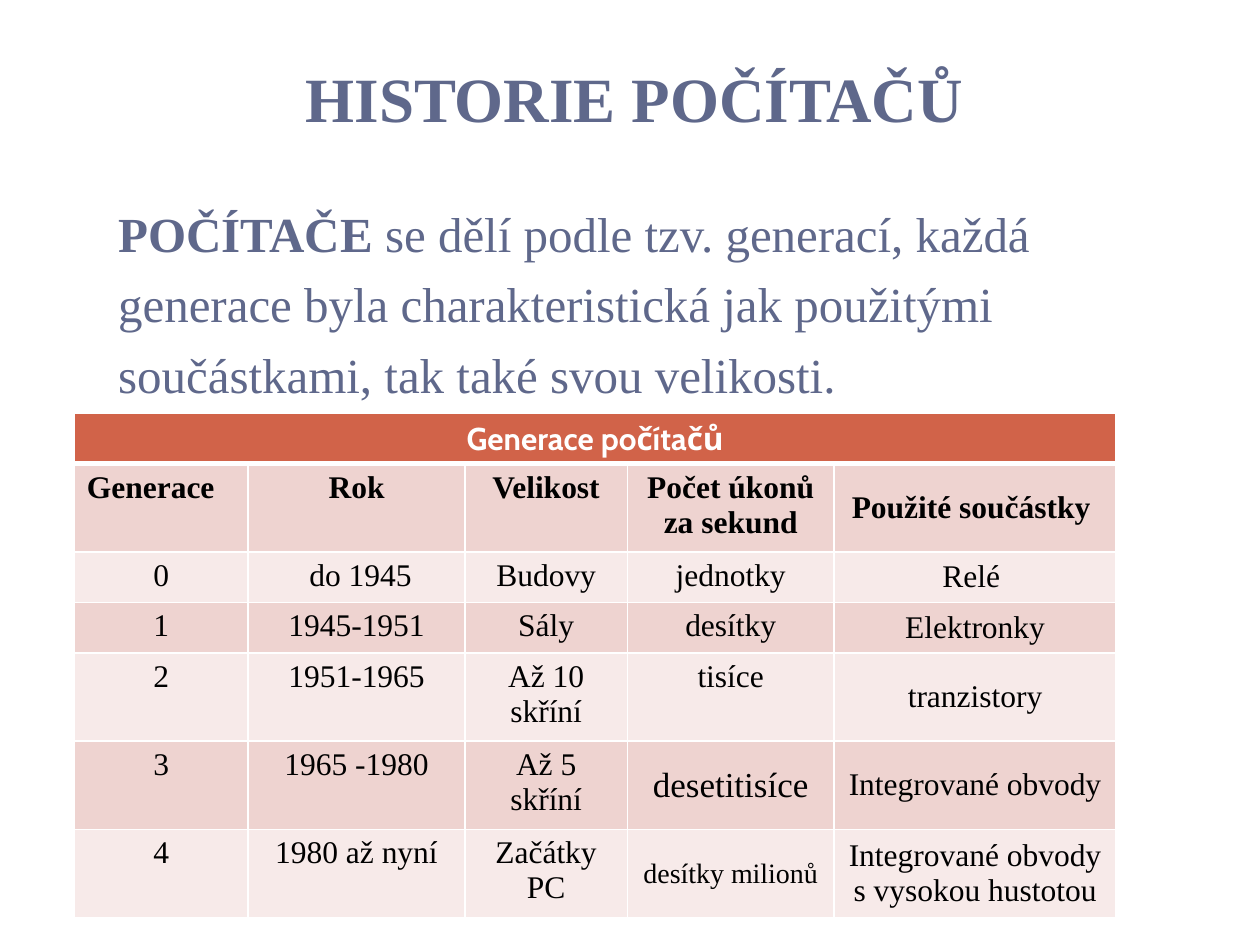
from lxml.etree import SubElement
from pptx import Presentation
from pptx.dml.color import RGBColor
from pptx.enum.text import MSO_ANCHOR, PP_ALIGN
from pptx.oxml import parse_xml
from pptx.oxml.ns import nsdecls
from pptx.util import Inches, Pt

COLORS = {
    "heading": "5F688B",
    "banner": "D16349",
    "dark_band": "EED3D0",
    "light_band": "F7EAE9",
    "ink": "000000",
    "white": "FFFFFF",
}
SERIF = "Times New Roman"
BANNER = "Generace počítačů"
HEADINGS = ["Generace", "Rok", "Velikost", "Počet úkonů za sekund", "Použité součástky "]
GENERATIONS = [
    ["0", " do 1945", "Budovy", "jednotky", "Relé "],
    ["1", "1945-1951", "Sály", "desítky", "Elektronky"],
    ["2", "1951-1965", "Až 10 skříní", "tisíce", "tranzistory"],
    ["3", "1965 -1980", "Až 5 skříní", "desetitisíce", "Integrované obvody"],
    ["4", "1980 až nyní", "Začátky PC", "desítky milionů", "Integrované obvody s vysokou hustotou"],
]
COLUMN_WIDTHS = [1.38, 1.72, 1.29, 1.64, 2.24]
ROW_HEIGHTS = [0.36, 0.63, 0.36, 0.36, 0.63, 0.63, 0.63]
SPECIAL_SIZES = {"desetitisíce": 20, "desítky milionů": 16}


class SlideBuilder:
    """Holds the slide and the style shared by its text and table."""

    def __init__(self, slide):
        self.slide = slide

    def style(self, font, size, color, bold=None, name=SERIF):
        font.name, font.size, font.bold = name, Pt(size), bold
        font.color.rgb = RGBColor.from_string(COLORS[color])

    def text(self, box, runs, size, anchor=MSO_ANCHOR.TOP):
        frame = self.slide.shapes.add_textbox(*map(Inches, box)).text_frame
        frame.word_wrap = True
        frame.vertical_anchor = anchor
        paragraph = frame.paragraphs[0]
        self.style(paragraph.font, size, "heading")
        for wording, bold in runs:
            run = paragraph.add_run()
            run.text = wording
            self.style(run.font, size, "heading", bold)
        return paragraph

    def borders(self, cell, bottom):
        properties = cell._tc.get_or_add_tcPr()
        for index, (side, width) in enumerate(zip("LRTB", (1, 1, 1, bottom))):
            line = parse_xml(f'<a:ln{side} {nsdecls("a")} w="{Pt(width)}"/>')
            fill = SubElement(line, line.tag.replace(f"ln{side}", "solidFill"))
            SubElement(fill, line.tag.replace(f"ln{side}", "srgbClr"), val=COLORS["white"])
            properties.insert(index, line)

    def cell(self, cell, wording, fill, size=18, color="ink", bold=False, name=SERIF,
             align=PP_ALIGN.CENTER, bottom=1):
        cell.fill.solid()
        cell.fill.fore_color.rgb = RGBColor.from_string(COLORS[fill])
        self.borders(cell, bottom)
        paragraph = cell.text_frame.paragraphs[0]
        paragraph.alignment = align
        if wording:
            paragraph.add_run().text = wording
            self.style(paragraph.runs[0].font, size, color, bold, name)

    def table(self, left, top):
        rows = [HEADINGS, *GENERATIONS]
        table = self.slide.shapes.add_table(
            len(ROW_HEIGHTS), len(COLUMN_WIDTHS), Inches(left), Inches(top),
            Inches(sum(COLUMN_WIDTHS)), Inches(sum(ROW_HEIGHTS))).table
        table.first_row = table.horz_banding = False
        for column, width in zip(table.columns, COLUMN_WIDTHS):
            column.width = Inches(width)
        for row, height in zip(table.rows, ROW_HEIGHTS):
            row.height = Inches(height)
        last = len(COLUMN_WIDTHS) - 1
        table.cell(0, 0).merge(table.cell(0, last))
        for column in range(last + 1):
            self.cell(table.cell(0, column), "" if column else BANNER, "banner",
                      color="white", bold=True, name="Cabin", bottom=3)
        for number, row in enumerate(rows, 1):
            for column, wording in enumerate(row):
                cell = table.cell(number, column)
                heading = number == 1
                self.cell(cell, wording, "dark_band" if number % 2 else "light_band",
                          SPECIAL_SIZES.get(wording, 18), bold=heading,
                          align=PP_ALIGN.LEFT if heading and column == 0 else PP_ALIGN.CENTER)
                if column == last or wording in SPECIAL_SIZES:
                    cell.vertical_anchor = MSO_ANCHOR.MIDDLE
                if wording in SPECIAL_SIZES:
                    cell.margin_left = cell.margin_right = cell.margin_top = Inches(0.01)
                    cell.margin_bottom = 0


def main():
    presentation = Presentation()
    presentation.slide_width, presentation.slide_height = Inches(10), Inches(7.5)
    builder = SlideBuilder(presentation.slides.add_slide(presentation.slide_layouts[6]))

    title = builder.text((0.43, 0.44, 9.21, 0.68), [("HISTORIE POČÍTAČŮ", True)], 36,
                         MSO_ANCHOR.BOTTOM)
    title.alignment = PP_ALIGN.CENTER
    title.line_spacing = Pt(20)

    intro = builder.text((0.75, 1.47, 8.66, 2.13), [
        ("POČÍTAČE ", True),
        ("se dělí podle tzv. generací, každá generace byla charakteristická jak použitými "
         "součástkami, tak také svou velikosti.", False)], 28)
    intro.line_spacing = 1.2
    intro.space_before = Pt(6)
    intro._p.get_or_add_pPr().set("marL", str(Inches(0.09)))

    builder.table(0.59, 3.28)
    presentation.save("out.pptx")


if __name__ == "__main__":
    main()
